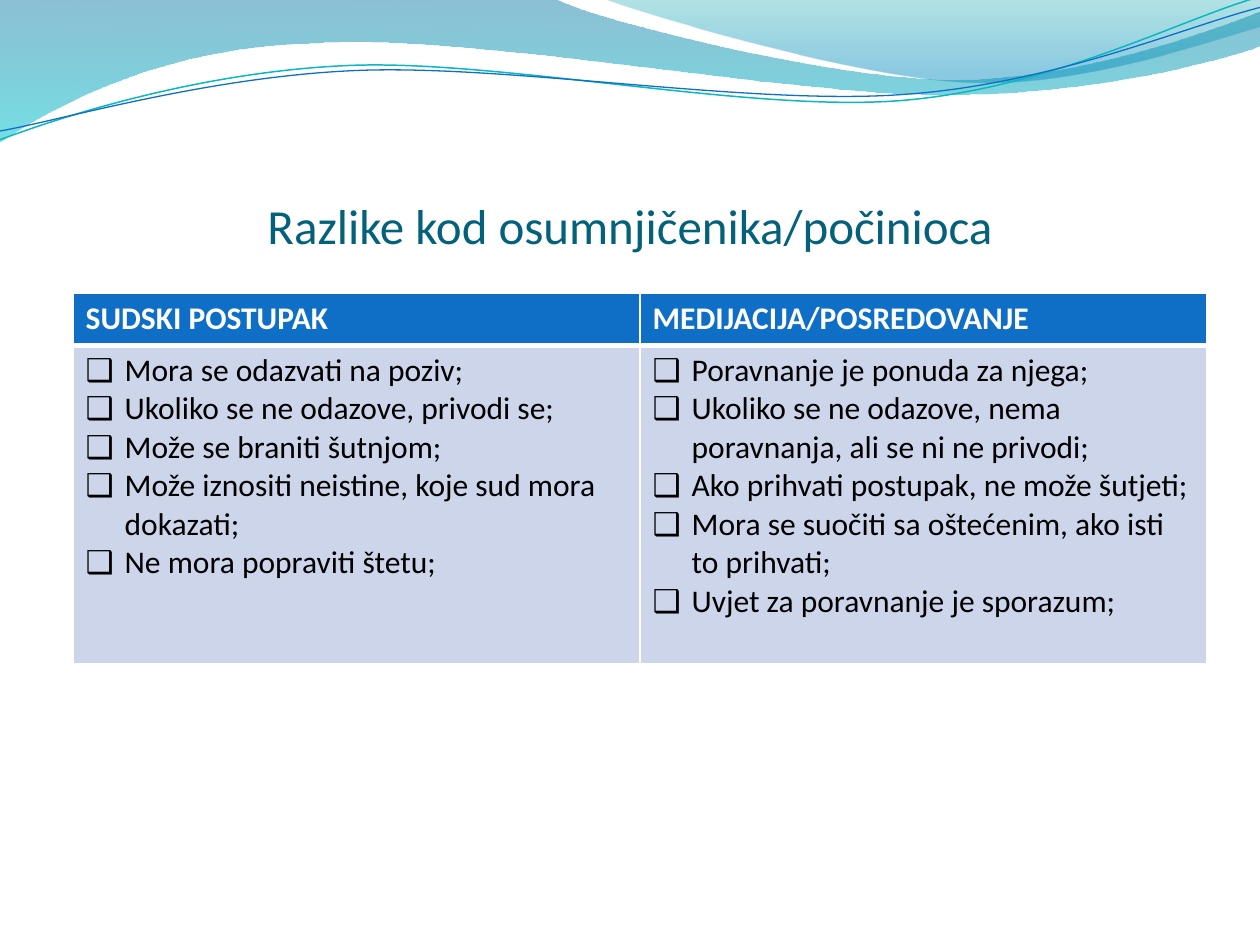
import math
from lxml import etree
from pptx import Presentation, util as u
from pptx.dml.color import RGBColor
from pptx.enum import text
from pptx.oxml.ns import qn


def color(code):
    return RGBColor.from_string(code)


def put(par, words, size=18, ink="000000", bold=False, align=None, mark=None):
    """Write words into a paragraph, with an optional bullet mark."""
    run = par.add_run()
    run.text = words
    run.font.name = "Calibri"
    run.font.size = u.Pt(size)
    run.font.bold = bold
    run.font.color.rgb = color(ink)
    if align is not None:
        par.alignment = align
    if mark:
        props = par._p.get_or_add_pPr()
        props.set("marL", str(u.Inches(0.31)))
        props.set("indent", str(-u.Inches(0.31)))
        etree.SubElement(props, qn("a:buFont")).set("typeface", "Calibri")
        etree.SubElement(props, qn("a:buChar")).set("char", mark)


def turn(pts, angle):
    """Turn points about the middle of their box."""
    xs, ys = zip(*pts)
    mx, my = (min(xs) + max(xs)) / 2, (min(ys) + max(ys)) / 2
    cos, sin = math.cos(math.radians(angle)), math.sin(math.radians(angle))
    return [(mx + (x - mx) * cos - (y - my) * sin,
             my + (x - mx) * sin + (y - my) * cos) for x, y in pts]


class Deck:
    blue, pale, white, teal = "0F6FC6", "CCD5EA", "FFFFFF", "04617B"

    def __init__(self):
        self.prs = Presentation()
        self.prs.slide_width, self.prs.slide_height = u.Inches(10), u.Inches(7.5)
        self.slide = self.prs.slides.add_slide(self.prs.slide_layouts[5])

    def outline(self, start, steps, close, tilt=0):
        """Draw straight steps (2 numbers) and Bezier steps (6 numbers)."""
        pts = [start]
        for step in steps:
            pts += zip(step[::2], step[1::2])
        pts = [(u.Inches(x), u.Inches(y)) for x, y in turn(pts, -tilt)]
        pen = self.slide.shapes.build_freeform(*pts[0])
        pen.add_line_segments(pts[1:], close=close)
        shape = pen.convert_to_shape()
        shape.shadow.inherit = False
        shape.rotation = tilt
        # Join each run of three segments into one Bezier curve
        lines = iter(list(shape._element.iter(qn("a:lnTo"))))
        for step in steps:
            first = next(lines)
            if len(step) == 6:
                first.tag = qn("a:cubicBezTo")
                for _ in range(2):
                    spare = next(lines)
                    first.append(spare[0])
                    spare.getparent().remove(spare)
        return shape

    def wave(self, start, steps, stops):
        shape = self.outline(start, steps, True)
        shape.line.fill.background()
        shape.fill.gradient()
        shape.fill.gradient_angle = 270
        for stop, (pos, code, alpha) in zip(shape.fill.gradient_stops, stops):
            stop.position = pos
            stop.color.rgb = color(code)
            tint = stop._gs.find(qn("a:srgbClr"))
            etree.SubElement(tint, qn("a:alpha")).set("val", str(alpha * 1000))

    def curve(self, start, steps, code, width):
        shape = self.outline(start, steps, False, tilt=-2.7)
        shape.fill.background()
        shape.line.color.rgb = color(code)
        shape.line.width = u.Pt(width)

    def title(self, words, left, top, width, height):
        box = self.slide.shapes.title
        box.left, box.top = u.Inches(left), u.Inches(top)
        box.width, box.height = u.Inches(width), u.Inches(height)
        frame = box.text_frame
        frame.auto_size = text.MSO_AUTO_SIZE.NONE
        frame.word_wrap = True
        frame.vertical_anchor = text.MSO_ANCHOR.BOTTOM
        frame.margin_left = frame.margin_right = frame.margin_bottom = 0
        frame.margin_top = u.Inches(0.05)
        put(frame.paragraphs[0], words, size=28, ink=self.teal,
            align=text.PP_ALIGN.CENTER)

    def cell(self, cell, lines, fill, edges, **style):
        props = cell._tc.get_or_add_tcPr()
        for side, width in zip("LRTB", edges):
            edge = etree.SubElement(props, qn("a:ln" + side))
            edge.set("w", str(u.Pt(width)))
            paint = etree.SubElement(edge, qn("a:solidFill"))
            etree.SubElement(paint, qn("a:srgbClr")).set("val", self.white)
        cell.fill.solid()
        cell.fill.fore_color.rgb = color(fill)
        frame = cell.text_frame
        for i, line in enumerate(lines):
            put(frame.add_paragraph() if i else frame.paragraphs[0], line, **style)

    def table(self, cols, left, top, width, heights):
        grid = self.slide.shapes.add_table(
            2, len(cols), u.Inches(left), u.Inches(top),
            u.Inches(width), u.Inches(sum(heights))).table
        grid.horz_banding = False
        for row, height in zip(grid.rows, heights):
            row.height = u.Inches(height)
        for i, (head, items) in enumerate(cols):
            self.cell(grid.cell(0, i), [head], self.blue, (1, 1, 1, 3),
                      ink=self.white, bold=True)
            self.cell(grid.cell(1, i), items, self.pale, (1, 1, 3, 1), mark="❑")


def main():
    deck = Deck()

    # Waves along the top
    deck.wave((0, 0), [
        (4.4, -0.01), (4.76, 0.17, 6.64, 0.63, 7.58, 0.63),
        (8.53, 0.63, 9.58, 0.26, 10, 0.09), (10.01, 0.36),
        (9.83, 0.44, 8.7, 0.76, 7.46, 0.75), (6.22, 0.75, 3.82, 0.28, 2.57, 0.34),
        (1.29, 0.36, 0.46, 0.83, -0.01, 1.13), (0, 0)],
        [(0, "0074A1", 45), (1, "00C6CF", 55)])
    deck.wave((4.79, -0.01), [
        (5.09, 0.11, 6.82, 0.62, 7.69, 0.65),
        (8.56, 0.69, 9.61, 0.32, 10, 0.21), (10, 0), (4.79, -0.01)],
        [(0, "00A1A9", 30), (0.8, "008BBF", 45)])

    # Thin curves
    deck.curve((0, 1.11), [
        (0.48, 0.93, 1.58, 0.57, 2.77, 0.52), (3.95, 0.47, 5.93, 0.89, 7.13, 0.8),
        (8.33, 0.71, 9.38, 0.15, 9.98, -0.02)], "0AB8BF", 0.85)
    deck.curve((0, 1.04), [
        (0.47, 0.96, 1.64, 0.61, 2.83, 0.56), (4.03, 0.51, 5.97, 0.84, 7.17, 0.75),
        (8.36, 0.67, 9.41, 0.21, 10, 0.06)], deck.blue, 0.75)

    # Title and comparison
    deck.title("Razlike kod osumnjičenika/počinioca", 0.5, 0.77, 9, 1.25)
    deck.table([
        ("SUDSKI POSTUPAK", [
            "Mora se odazvati na poziv;",
            "Ukoliko se ne odazove, privodi se;",
            "Može se braniti šutnjom;",
            "Može iznositi neistine, koje sud mora dokazati;",
            "Ne mora popraviti štetu;"]),
        ("MEDIJACIJA/POSREDOVANJE", [
            "Poravnanje je ponuda za njega;",
            "Ukoliko se ne odazove, nema poravnanja, ali se ni ne privodi;",
            "Ako prihvati postupak, ne može šutjeti;",
            "Mora se suočiti sa oštećenim, ako isti to prihvati;",
            "Uvjet za poravnanje je sporazum;"]),
    ], 0.58, 2.33, 9, (0.41, 2.53))

    deck.prs.save("out.pptx")


if __name__ == "__main__":
    main()
